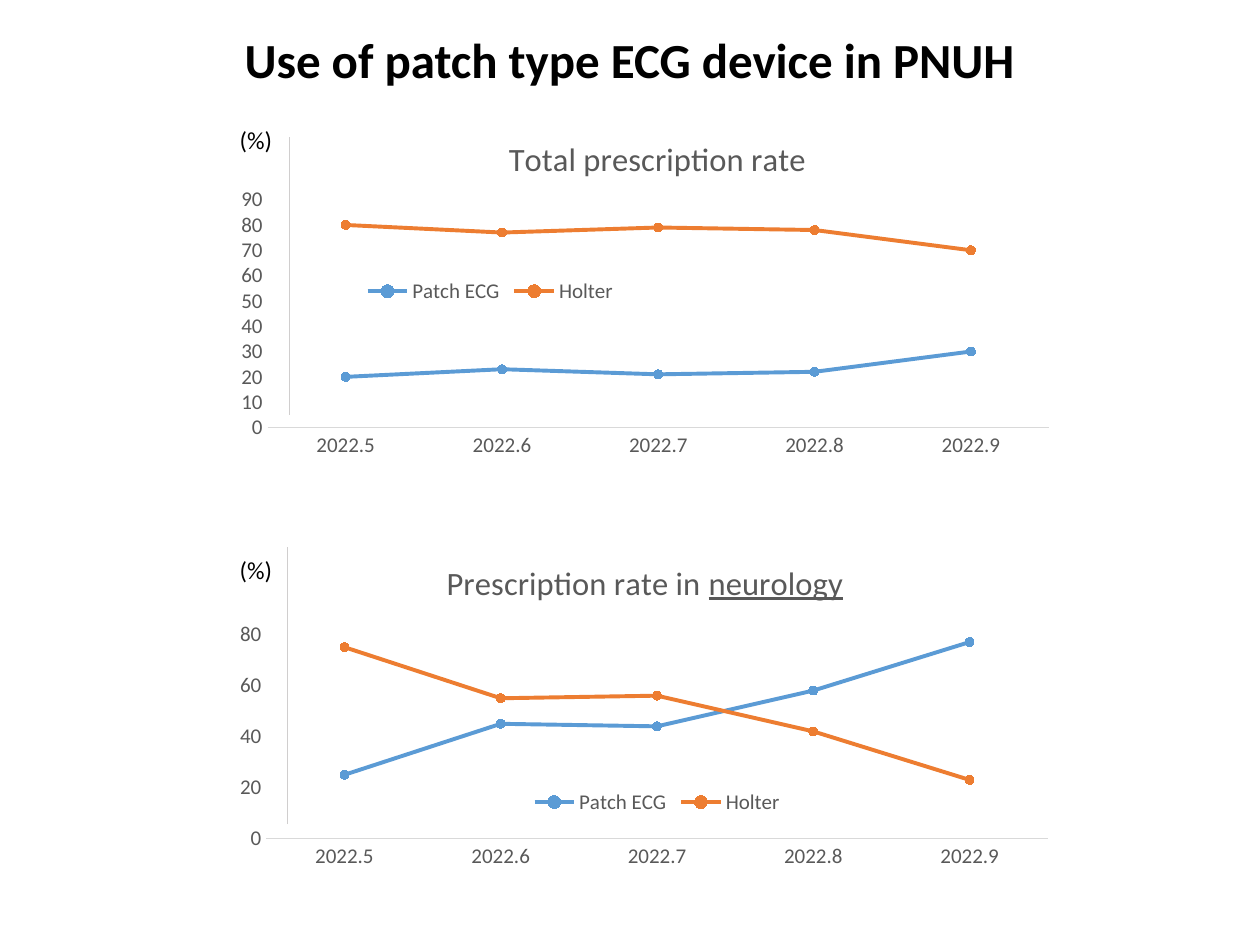
from dataclasses import dataclass

from lxml.etree import SubElement
from pptx import Presentation
from pptx.chart.data import CategoryChartData
from pptx.dml.color import RGBColor
from pptx.enum.chart import XL_CHART_TYPE, XL_LEGEND_POSITION, XL_MARKER_STYLE, XL_TICK_MARK
from pptx.enum.shapes import MSO_CONNECTOR, MSO_SHAPE
from pptx.enum.text import MSO_ANCHOR, MSO_AUTO_SIZE, PP_ALIGN
from pptx.oxml import parse_xml
from pptx.oxml.ns import nsdecls, qn
from pptx.util import Inches, Pt


@dataclass(frozen=True)
class Theme:
    font: str = "Calibri"
    ink: str = "000000"
    muted: str = "595959"
    paper: str = "FFFFFF"
    axis: str = "D9D9D9"
    rule: str = "D0CECE"
    series: tuple = ("5B9BD5", "ED7D31")
    heading_size: float = 28
    chart_title_size: float = 18.6
    unit_size: float = 14
    label_size: float = 12


COLUMNS, ROWS = 100, 75
MONTHS = [f"2022.{month}" for month in range(5, 10)]


def style_font(font, theme, size, color, bold=False, underline=False):
    font.name = theme.font
    font.size = Pt(size)
    font.bold = bold
    font.underline = underline
    font.color.rgb = RGBColor.from_string(color)


def write(frame, text, theme, size, color, underlined="", **format):
    para = frame.paragraphs[0]
    para.alignment = PP_ALIGN.CENTER
    for part, underline in ((text, False), (underlined, True)):
        if part:
            span = para.add_run()
            span.text = part
            style_font(span.font, theme, size, color, underline=underline, **format)


def place(element, position, **shares):
    for old in element.findall(qn("c:layout")):
        element.remove(old)
    layout = parse_xml(f"<c:layout {nsdecls('c')}><c:manualLayout/></c:layout>")
    manual = layout[0]
    if element.tag == qn("c:plotArea"):
        SubElement(manual, qn("c:layoutTarget")).set("val", "inner")
    for edge in ("x", "y"):
        SubElement(manual, qn(f"c:{edge}Mode")).set("val", "edge")
    for name, share in shares.items():
        SubElement(manual, qn(f"c:{name}")).set("val", str(share))
    element.insert(position, layout)


class SlideBuilder:
    def __init__(self, deck, theme):
        self.theme = theme
        self.column = deck.slide_width / COLUMNS
        self.row = deck.slide_height / ROWS
        self.slide = deck.slides.add_slide(deck.slide_layouts[5])

    def grid(self, left, top, width, height):
        return (round(left * self.column), round(top * self.row),
                round(width * self.column), round(height * self.row))

    def title(self, text, area):
        box = self.slide.shapes.title
        box.left, box.top, box.width, box.height = self.grid(*area)
        box.text_frame.word_wrap = True
        box.text_frame.auto_size = MSO_AUTO_SIZE.SHAPE_TO_FIT_TEXT
        write(box.text_frame, text, self.theme, self.theme.heading_size, self.theme.ink, bold=True)

    def unit(self, text, area):
        box = self.slide.shapes.add_shape(MSO_SHAPE.RECTANGLE, *self.grid(*area))
        box.shadow.inherit = False
        box.fill.solid()
        box.fill.fore_color.rgb = RGBColor.from_string(self.theme.paper)
        box.line.fill.background()
        box.text_frame.vertical_anchor = MSO_ANCHOR.MIDDLE
        write(box.text_frame, text, self.theme, self.theme.unit_size, self.theme.ink)

    def axis_rule(self, column, top, height):
        left, start, _, length = self.grid(column, top, 0, height)
        rule = self.slide.shapes.add_connector(
            MSO_CONNECTOR.STRAIGHT, left, start + length, left, start)
        rule.line.color.rgb = RGBColor.from_string(self.theme.rule)
        rule.line.width = Pt(0.5)
        SubElement(rule._element.spPr, qn("a:effectLst"))

    def line_chart(self, area, rates, title, underlined, top_value, step,
                   title_at, plot_at, legend_at):
        data = CategoryChartData()
        data.categories = MONTHS
        for name, values in rates.items():
            data.add_series(name, values)
        chart = self.slide.shapes.add_chart(
            XL_CHART_TYPE.LINE_MARKERS, *self.grid(*area), data).chart
        theme = self.theme
        style_font(chart.font, theme, theme.label_size, theme.muted)
        chart._chartSpace.find(qn("c:chart")).addnext(parse_xml(
            f"<c:spPr {nsdecls('c', 'a')}><a:noFill/><a:ln><a:noFill/></a:ln></c:spPr>"))

        chart.has_title = True
        write(chart.chart_title.text_frame, title, theme, theme.chart_title_size,
              theme.muted, underlined=underlined)
        chart.has_legend = True
        chart.legend.position = XL_LEGEND_POSITION.BOTTOM
        chart.legend.include_in_layout = False
        style_font(chart.legend.font, theme, theme.label_size, theme.muted)

        for axis in (chart.category_axis, chart.value_axis):
            axis.major_tick_mark = axis.minor_tick_mark = XL_TICK_MARK.NONE
            axis.has_major_gridlines = False
            style_font(axis.tick_labels.font, theme, theme.label_size, theme.muted)
        chart.category_axis.format.line.color.rgb = RGBColor.from_string(theme.axis)
        chart.category_axis.format.line.width = Pt(0.75)
        chart.value_axis.format.line.fill.background()
        chart.value_axis.minimum_scale = 0
        chart.value_axis.maximum_scale = top_value
        chart.value_axis.major_unit = step

        chart.plots[0].vary_by_categories = False
        for series, color in zip(chart.plots[0].series, theme.series):
            paint = RGBColor.from_string(color)
            series.smooth = False
            series.format.line.color.rgb = paint
            series.format.line.width = Pt(2.25)
            series.marker.style = XL_MARKER_STYLE.CIRCLE
            series.marker.size = 5
            series.marker.format.fill.solid()
            series.marker.format.fill.fore_color.rgb = paint
            series.marker.format.line.color.rgb = paint

        place(chart.chart_title._element, 1, x=title_at[0], y=title_at[1])
        place(chart.legend._element, 1, x=legend_at[0], y=legend_at[1], w=0.31, h=0.07)
        place(chart._chartSpace.chart.plotArea, 0,
              x=0.05, y=plot_at[0], w=0.93, h=plot_at[1])


def main():
    deck = Presentation()
    deck.slide_width, deck.slide_height = Inches(10), Inches(7.5)
    page = SlideBuilder(deck, Theme())
    page.title("Use of patch type ECG device in PNUH", (7.8, 1.8, 84.3, 5.7))

    page.unit("(%)", (15.4, 9.7, 9.8, 2.8))
    page.line_chart(
        (17.9, 8.1, 66.7, 32.3),
        {"Patch ECG": (20, 23, 21, 22, 30), "Holter": (80, 77, 79, 78, 70)},
        "Total prescription rate", "", top_value=90, step=10,
        title_at=(0.33, 0.07), plot_at=(0.24, 0.56), legend_at=(0.16, 0.43))
    page.axis_rule(23, 10.9, 22)

    page.unit("(%)", (15.4, 43.8, 9.8, 2.8))
    page.line_chart(
        (17.8, 42.4, 66.7, 30.6),
        {"Patch ECG": (25, 45, 44, 58, 77), "Holter": (75, 55, 56, 42, 23)},
        "Prescription rate in ", "neurology", top_value=80, step=20,
        title_at=(0.26, 0.06), plot_at=(0.26, 0.53), legend_at=(0.36, 0.66))
    page.axis_rule(22.8, 43.4, 22)

    deck.save("out.pptx")


if __name__ == "__main__":
    main()
